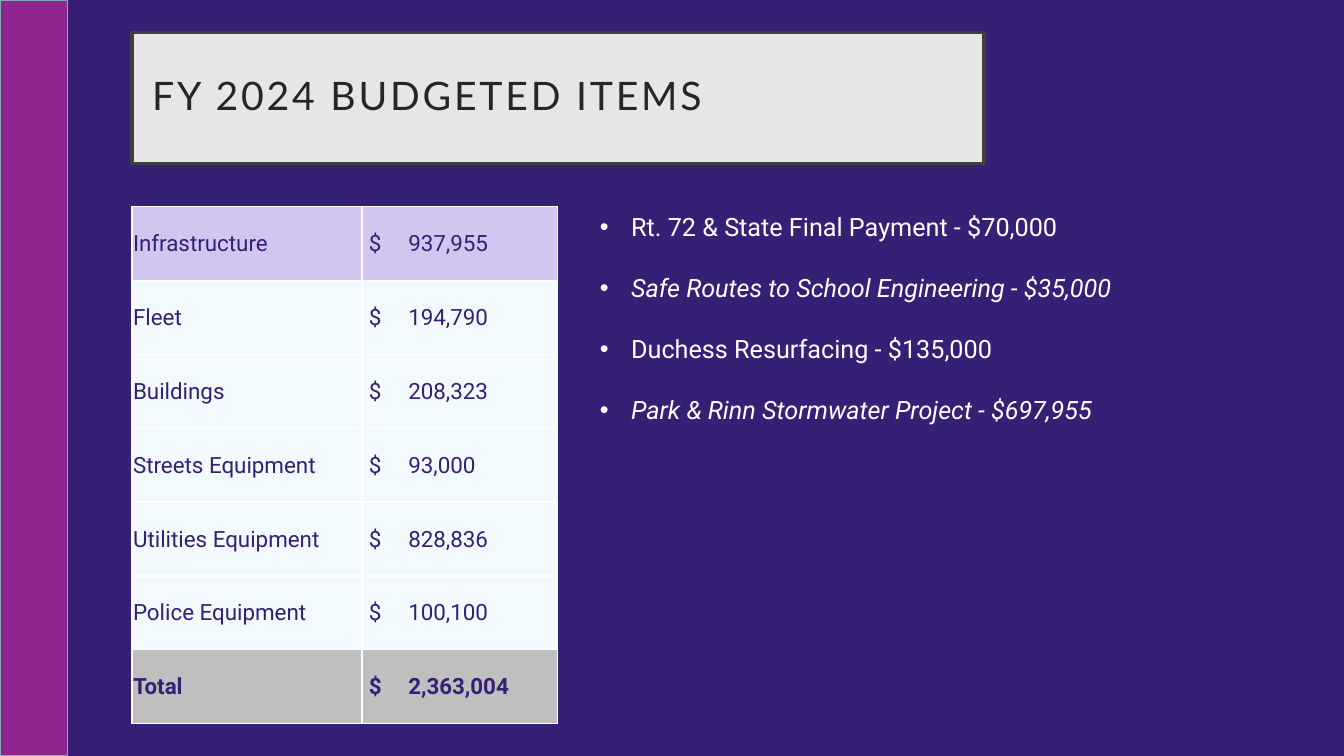
"""Build the FY 2024 budgeted items slide."""
from lxml import etree
from pptx import Presentation
from pptx.dml.color import RGBColor
from pptx.enum import shapes, text
from pptx.oxml import ns
from pptx.util import Inches, Pt

TITLE = "FY 2024 BUDGETED ITEMS"
BUDGET = [
    ("Infrastructure", "937,955", "D0C6F0", False),
    ("Fleet", "194,790", "F2FAFE", False),
    ("Buildings", "208,323", "F2FAFE", False),
    ("Streets Equipment", "93,000", "F2FAFE", False),
    ("Utilities Equipment", "828,836", "F2FAFE", False),
    ("Police Equipment", "100,100", "F2FAFE", False),
    ("Total", "2,363,004", "BFBFBF", True),
]
PROJECTS = [
    ("Rt. 72 & State Final Payment - $70,000", False),
    ("Safe Routes to School Engineering - $35,000", True),
    ("Duchess Resurfacing - $135,000", False),
    ("Park & Rinn Stormwater Project - $697,955", True),
]
PURPLE, WHITE = "352076", "FFFFFF"
LEFT, CONTENT_TOP = 1.31, 2.05
TABLE_HEIGHT = 5.13
COLUMN_WIDTHS = (2.28, 1.94)
CELL_INSETS = (0.01, 0.07)


def color(value):
    return RGBColor.from_string(value)


def apply(target, values):
    for name, value in values.items():
        setattr(target, name, value)


def place(item, left, top, width, height):
    apply(item, {"left": Inches(left), "top": Inches(top),
                 "width": Inches(width), "height": Inches(height)})


def paint(item, fill, line, weight):
    item.fill.solid()
    item.fill.fore_color.rgb = color(fill)
    item.line.color.rgb = color(line)
    item.line.width = Pt(weight)


def write(paragraph, words, ink, **values):
    run = paragraph.add_run()
    run.text = words
    apply(run.font, values)
    run.font.color.rgb = color(ink)
    return run


def add_xml(parent, tag, **attributes):
    return etree.SubElement(parent, ns.qn(tag), attributes)


def add_borders(cell):
    properties = cell._tc.get_or_add_tcPr()
    for index, side in enumerate(("a:lnL", "a:lnR", "a:lnT", "a:lnB")):
        border = etree.Element(ns.qn(side), w=str(Pt(1)))
        add_xml(add_xml(border, "a:solidFill"), "a:srgbClr", val=WHITE)
        properties.insert(index, border)


def add_title(slide):
    title = slide.shapes.title
    place(title, LEFT, 0.32, 8.45, 1.3)
    paint(title, "E7E6E6", "404040", 2.5)
    frame = title.text_frame
    inset = Inches(0.2)
    apply(frame, {"margin_left": inset, "margin_right": inset,
                  "margin_top": inset, "margin_bottom": inset,
                  "auto_size": text.MSO_AUTO_SIZE.NONE, "word_wrap": True,
                  "vertical_anchor": text.MSO_ANCHOR.MIDDLE})
    heading = frame.paragraphs[0]
    apply(heading, {"alignment": text.PP_ALIGN.LEFT, "line_spacing": 0.9})
    run = write(heading, TITLE, "262626", name="Lato", size=Pt(28))
    run.font._element.set("spc", "200")


def add_budget(slide):
    budget = slide.shapes.add_table(
        len(BUDGET), len(COLUMN_WIDTHS), Inches(LEFT), Inches(CONTENT_TOP),
        Inches(sum(COLUMN_WIDTHS)), Inches(TABLE_HEIGHT)).table
    apply(budget, {"first_row": False, "horz_banding": False})
    for column, width in zip(budget.columns, COLUMN_WIDTHS):
        column.width = Inches(width)
    for row, (item, amount, fill, bold) in zip(budget.rows, BUDGET):
        row.height = Inches(TABLE_HEIGHT / len(BUDGET))
        for cell, words, inset in zip(row.cells, (item, f"$\t{amount}"), CELL_INSETS):
            apply(cell, {"margin_left": Inches(inset), "margin_right": Inches(0.01),
                         "margin_top": Inches(0.01), "margin_bottom": 0,
                         "vertical_anchor": text.MSO_ANCHOR.MIDDLE})
            cell.fill.solid()
            cell.fill.fore_color.rgb = color(fill)
            add_borders(cell)
            entry = cell.text_frame.paragraphs[0]
            if "\t" in words:
                stops = add_xml(entry._p.get_or_add_pPr(), "a:tabLst")
                add_xml(stops, "a:tab", pos=str(Inches(0.39)), algn="l")
            write(entry, words, PURPLE, name="Roboto", size=Pt(16), bold=bold)


def add_projects(slide):
    projects = slide.placeholders[1]
    place(projects, 5.85, CONTENT_TOP, 6.17, 2.52)
    frame = projects.text_frame
    apply(frame, {"auto_size": text.MSO_AUTO_SIZE.NONE, "word_wrap": True,
                  "vertical_anchor": text.MSO_ANCHOR.TOP})
    for index, (project, italic) in enumerate(PROJECTS):
        entry = frame.add_paragraph() if index else frame.paragraphs[0]
        apply(entry, {"space_before": Pt(22 if index else 0), "space_after": Pt(0)})
        properties = entry._p.get_or_add_pPr()
        properties.set("marL", str(Inches(0.31)))
        properties.set("indent", str(-Inches(0.31)))
        add_xml(properties, "a:buFont", typeface="Arial")
        add_xml(properties, "a:buChar", char="•")
        write(entry, project, WHITE, name="Roboto", size=Pt(18), italic=italic)


def main():
    deck = Presentation()
    apply(deck, {"slide_width": Inches(13.33), "slide_height": Inches(7.5)})
    slide = deck.slides.add_slide(deck.slide_layouts[1])
    slide.background.fill.solid()
    slide.background.fill.fore_color.rgb = color(PURPLE)
    side_bar = slide.shapes.add_shape(
        shapes.MSO_SHAPE.RECTANGLE, 0, 0, Inches(0.67), Inches(7.5))
    side_bar.shadow.inherit = False
    paint(side_bar, "8F268F", "84A9B9", 1)
    add_title(slide)
    add_budget(slide)
    add_projects(slide)
    deck.save("out.pptx")


if __name__ == "__main__":
    main()
